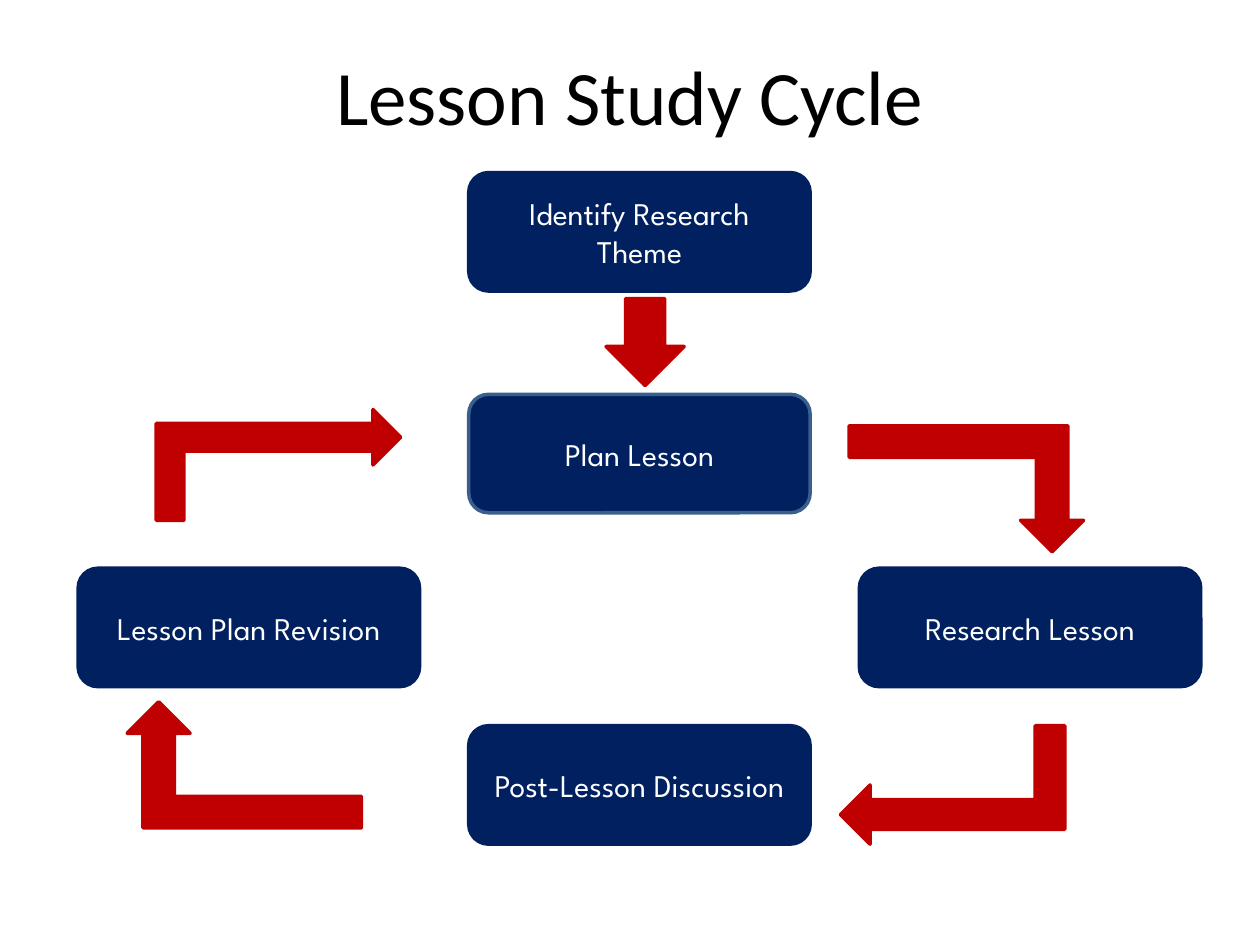
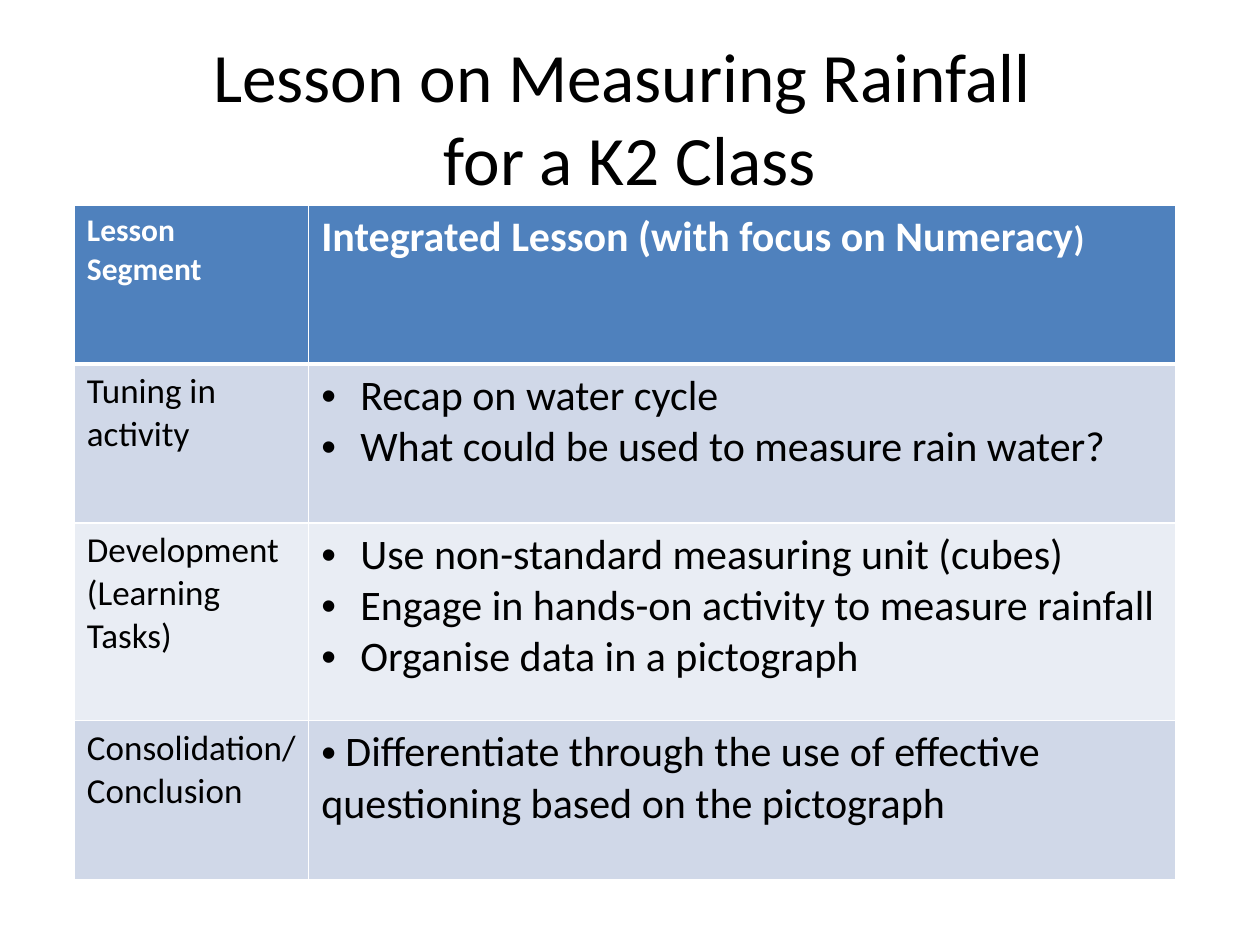
from lxml.etree import SubElement
from pptx import Presentation
from pptx.dml.color import RGBColor
from pptx.enum.shapes import MSO_SHAPE
from pptx.enum.text import MSO_ANCHOR, PP_ALIGN
from pptx.oxml.ns import qn
from pptx.util import Inches, Pt

NAVY, STEEL, RED = "002060", "3A5F8C", "C00000"
BLACK, WHITE = "000000", "FFFFFF"
HEADER_BLUE, BAND_DARK, BAND_LIGHT = "4F81BD", "D0D8E8", "E9EDF4"
BODY_FONT, STEP_FONT = "Calibri", "League Spartan"
HANGING = 0.31


def rgb(hex_color):
    return RGBColor.from_string(hex_color)


def add_bullet(paragraph, indent):
    properties = paragraph._p.get_or_add_pPr()
    properties.set("marL", str(Inches(indent)))
    properties.set("indent", str(-Inches(indent)))
    SubElement(properties, qn("a:buFont"), typeface="Arial")
    SubElement(properties, qn("a:buChar"), char="•")


def write(frame, paragraphs, size=18, font=BODY_FONT, color=BLACK, bold=False,
          align=PP_ALIGN.LEFT, anchor=MSO_ANCHOR.TOP, bullet_indent=None):
    """Fill a text frame; a paragraph is a string or a list of (text, size) runs.

    A newline inside a run becomes a line break.
    """
    frame.word_wrap = True
    frame.vertical_anchor = anchor
    for index, content in enumerate(paragraphs):
        paragraph = frame.add_paragraph() if index else frame.paragraphs[0]
        paragraph.alignment = align
        if bullet_indent is not None:
            add_bullet(paragraph, bullet_indent)
        runs = [(content, size)] if isinstance(content, str) else content
        for text, run_size in runs:
            for line_number, line in enumerate(text.split("\n")):
                if line_number:
                    paragraph.add_line_break()
                run = paragraph.add_run()
                run.text = line
                run.font.size = Pt(run_size)
                run.font.name = font
                run.font.bold = bold
                run.font.color.rgb = rgb(color)


def set_borders(cell, **widths):
    """Draw white borders; widths are points keyed by side: L, R, T, B."""
    properties = cell._tc.get_or_add_tcPr()
    for side, width in widths.items():
        border = SubElement(properties, qn(f"a:ln{side}"), w=str(Pt(width)))
        fill = SubElement(border, qn("a:solidFill"))
        SubElement(fill, qn("a:srgbClr"), val=WHITE)


class Deck:
    """Holds the presentation, its shared style and the current slide."""

    def __init__(self):
        self.presentation = Presentation()
        self.presentation.slide_width = Inches(10)
        self.presentation.slide_height = Inches(7.5)
        self.slide = None

    def new_slide(self):
        self.slide = self.presentation.slides.add_slide(self.presentation.slide_layouts[6])
        background = self.slide.background.fill
        background.solid()
        background.fore_color.rgb = rgb(WHITE)

    def title(self, text, top, size):
        box = self.slide.shapes.add_textbox(Inches(0.5), Inches(top), Inches(9), Inches(1.25))
        write(box.text_frame, [text], size=size, align=PP_ALIGN.CENTER, anchor=MSO_ANCHOR.MIDDLE)

    def shape(self, preset, left, top, width, height, fill, line):
        shape = self.slide.shapes.add_shape(
            preset, Inches(left), Inches(top), Inches(width), Inches(height))
        shape.shadow.inherit = False
        shape.fill.solid()
        shape.fill.fore_color.rgb = rgb(fill)
        shape.line.color.rgb = rgb(line)
        shape.line.width = Pt(2)
        return shape

    def step(self, text, left, top, line=NAVY):
        box = self.shape(MSO_SHAPE.ROUNDED_RECTANGLE, left, top, 2.71, 0.94, NAVY, line)
        write(box.text_frame, [text], font=STEP_FONT, color=WHITE,
              align=PP_ALIGN.CENTER, anchor=MSO_ANCHOR.MIDDLE)

    def arrow(self, preset, left, top, width, height, rotation=0, flip=None):
        arrow = self.shape(preset, left, top, width, height, RED, RED)
        arrow.rotation = rotation
        if flip:
            arrow._element.spPr.find(qn("a:xfrm")).set(flip, "1")

    def table(self, left, top, column_widths, row_heights):
        table = self.slide.shapes.add_table(
            len(row_heights), len(column_widths), Inches(left), Inches(top),
            Inches(sum(column_widths)), Inches(sum(row_heights))).table
        for column, width in zip(table.columns, column_widths):
            column.width = Inches(width)
        for row, height in zip(table.rows, row_heights):
            row.height = Inches(height)
        return table

    def cell(self, cell, paragraphs, fill, top_border=1, bottom_border=1, **text_format):
        set_borders(cell, L=1, R=1, T=top_border, B=bottom_border)
        cell.fill.solid()
        cell.fill.fore_color.rgb = rgb(fill)
        write(cell.text_frame, paragraphs, **text_format)


def build_cycle(deck):
    deck.new_slide()
    left, center, right = (0.62 + 3.1 * column for column in range(3))
    deck.step("Identify Research Theme", center, 1.37)
    deck.step("Plan Lesson", center, 3.13, line=STEEL)
    deck.step("Research Lesson", right, 4.51)
    deck.step("Post-Lesson Discussion", center, 5.76)
    deck.step("Lesson Plan Revision", left, 4.51)

    bent = MSO_SHAPE.BENT_UP_ARROW
    deck.arrow(bent, 6.74, 3.38, 1.86, 1, flip="flipV")
    deck.arrow(bent, 7.09, 5.34, 0.94, 1.78, rotation=270, flip="flipH")
    deck.arrow(bent, 1.77, 2.72, 0.88, 1.94, rotation=90, flip="flipH")
    deck.arrow(bent, 1.01, 5.57, 1.86, 1, flip="flipH")
    deck.arrow(MSO_SHAPE.DOWN_ARROW, 4.81, 2.37, 0.62, 0.69)
    deck.title("Lesson Study Cycle", 0.13, 44)


def build_rainfall_lesson(deck):
    deck.new_slide()
    segments = [
        (["Tuning in activity"],
         ["Recap on water cycle", "What could be used to measure rain water?"], HANGING),
        (["Development", "(Learning Tasks)"],
         ["Use non-standard measuring unit (cubes)",
          "Engage in hands-on activity to measure rainfall",
          "Organise data in a pictograph"], HANGING),
        (["Consolidation/ Conclusion"],
         [" Differentiate through the use of effective questioning based on the pictograph"], 0),
    ]
    table = deck.table(0.59, 1.63, [1.86, 6.88], [1.26, 1.26, 1.57, 1.26])
    headings = [["Lesson Segment"],
                [[("Integrated Lesson (with focus on Numeracy", 24), (")", 20)]]]
    for column, heading in enumerate(headings):
        deck.cell(table.cell(0, column), heading, HEADER_BLUE, bottom_border=3,
                  color=WHITE, bold=True)
    for row, (segment, activities, indent) in enumerate(segments, start=1):
        style = {"fill": BAND_DARK if row % 2 else BAND_LIGHT,
                 "top_border": 3 if row == 1 else 1}
        deck.cell(table.cell(row, 0), segment, size=20, **style)
        deck.cell(table.cell(row, 1), activities, size=24, bullet_indent=indent, **style)
    deck.title("Lesson on Measuring Rainfall \nfor a K2 Class", 0.3, 39.6)


def main():
    deck = Deck()
    build_cycle(deck)
    build_rainfall_lesson(deck)
    deck.presentation.save("out.pptx")


if __name__ == "__main__":
    main()
